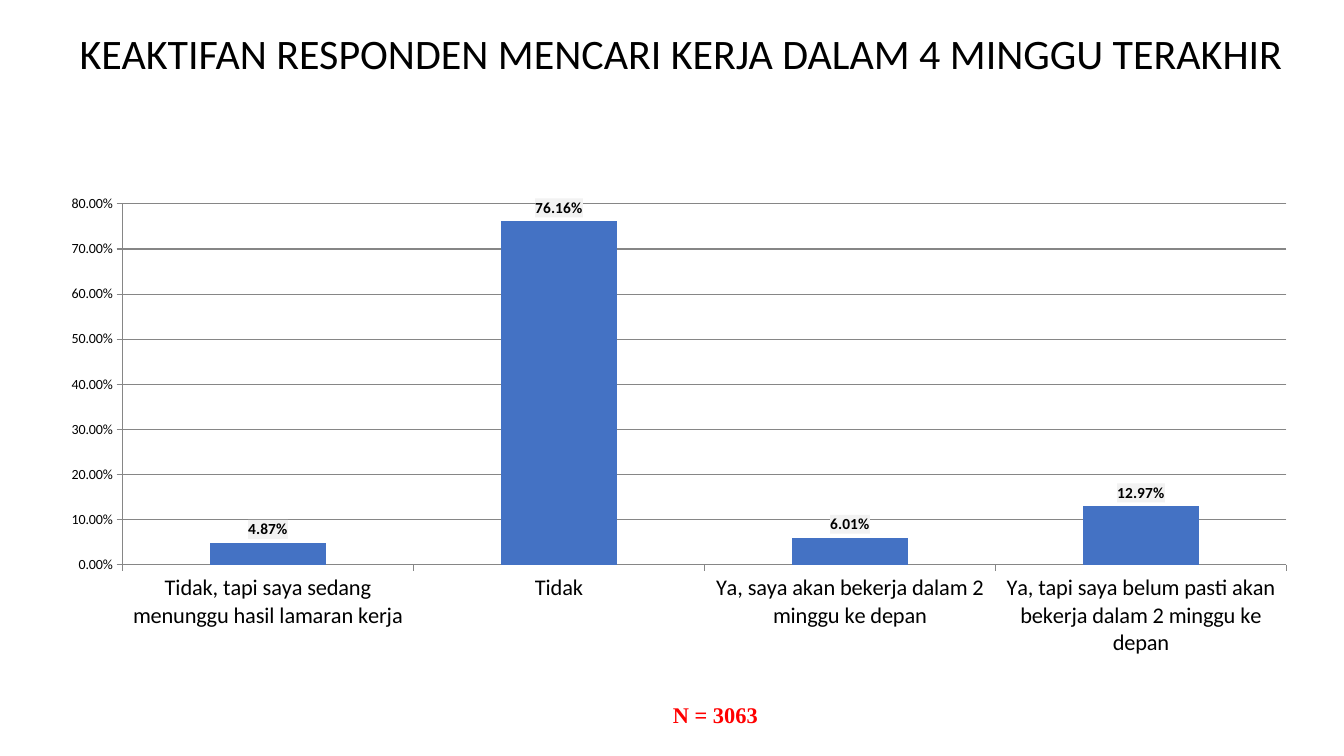
from lxml import etree
from pptx import Presentation
from pptx.chart.data import CategoryChartData
from pptx.dml.color import RGBColor
from pptx.enum.chart import XL_CHART_TYPE as CT, XL_LABEL_POSITION as LP, XL_TICK_MARK as TM
from pptx.enum.text import MSO_ANCHOR as ANC, PP_ALIGN as AL
from pptx.oxml.ns import qn
from pptx.util import Inches, Pt

COLORS = {"text": "000000", "bar": "4472C4", "grid": "868686",
          "label": "F2F2F2", "accent": "FF0000"}
PERCENT = "0.00%"
ANSWERS = {
    "Tidak, tapi saya sedang menunggu hasil lamaran kerja": 0.0487,
    "Tidak": 0.7616,
    "Ya, saya akan bekerja dalam 2 minggu ke depan": 0.0601,
    "Ya, tapi saya belum pasti akan bekerja dalam 2 minggu ke depan": 0.1297,
}


class Deck:
    font = "Calibri"

    def __init__(self):
        self.prs = Presentation()
        self.prs.slide_width, self.prs.slide_height = Inches(13.33), Inches(7.5)
        self.s = self.prs.slides.add_slide(self.prs.slide_layouts[5])

    def color(self, name):
        return RGBColor.from_string(COLORS[name])

    def style(self, font, size, color="text", bold=False, name=None):
        font.name, font.size, font.bold = name or self.font, Pt(size), bold
        font.color.rgb = self.color(color)

    def title(self, text, x, y, w, h):
        sp = self.s.shapes.title
        sp.left, sp.top, sp.width, sp.height = map(Inches, (x, y, w, h))
        tf = sp.text_frame
        tf.text, tf.vertical_anchor, tf.word_wrap = text, ANC.MIDDLE, True
        p = tf.paragraphs[0]
        p.alignment, p.line_spacing = AL.CENTER, 0.9
        self.style(p.font, 30)

    def column_chart(self, values, x, y, w, h):
        data = CategoryChartData(number_format=PERCENT)
        data.categories = list(values)
        data.add_series("Series 1", list(values.values()))
        chart = self.s.shapes.add_chart(
            CT.COLUMN_CLUSTERED, *map(Inches, (x, y, w, h)), data).chart
        chart.has_legend = chart.has_title = False
        self.style(chart.font, 10)
        self.axis(chart.category_axis, 16)
        axis = chart.value_axis
        self.axis(axis, 10)
        axis.minimum_scale, axis.maximum_scale, axis.major_unit = 0, 0.8, 0.1
        axis.has_major_gridlines = True
        self.line(axis.major_gridlines.format.line)
        axis.tick_labels.number_format = PERCENT
        axis.tick_labels.number_format_is_linked = False
        plot = chart.plots[0]
        plot.gap_width, plot.vary_by_categories = 150, False
        fill = plot.series[0].format.fill
        fill.solid()
        fill.fore_color.rgb = self.color("bar")
        self.value_labels(plot.series[0].data_labels)

    def line(self, line):
        line.color.rgb, line.width = self.color("grid"), Pt(0.75)

    def axis(self, axis, size):
        axis.major_tick_mark, axis.minor_tick_mark = TM.OUTSIDE, TM.NONE
        self.line(axis.format.line)
        self.style(axis.tick_labels.font, size)

    def value_labels(self, labels):
        labels.show_value, labels.position = True, LP.OUTSIDE_END
        labels.number_format, labels.number_format_is_linked = PERCENT, False
        self.style(labels.font, 11, bold=True)
        box = etree.Element(qn("c:spPr"))
        fill = etree.SubElement(box, qn("a:solidFill"))
        etree.SubElement(fill, qn("a:srgbClr"), val=COLORS["label"])
        labels._element.find(qn("c:txPr")).addprevious(box)

    def one_cell_table(self, text, x, y, w, h):
        table = self.s.shapes.add_table(1, 1, *map(Inches, (x, y, w, h))).table
        table.first_row = table.horz_banding = False
        cell = table.cell(0, 0)
        cell.fill.background()
        cell.margin_top = cell.margin_bottom = 0
        cell.text, cell.vertical_anchor = text, ANC.MIDDLE
        p = cell.text_frame.paragraphs[0]
        p.alignment = AL.CENTER
        self.style(p.font, 16, "accent", True, "Times New Roman")


def main():
    deck = Deck()
    deck.column_chart(ANSWERS, 0.46, 1.85, 12.55, 4.76)
    deck.title("KEAKTIFAN RESPONDEN MENCARI KERJA DALAM 4 MINGGU TERAKHIR",
               0.55, 0.1, 12.42, 0.9)
    deck.one_cell_table("N = 3063", 6.43, 6.94, 1.33, 0.33)
    deck.prs.save("out.pptx")


if __name__ == "__main__":
    main()
